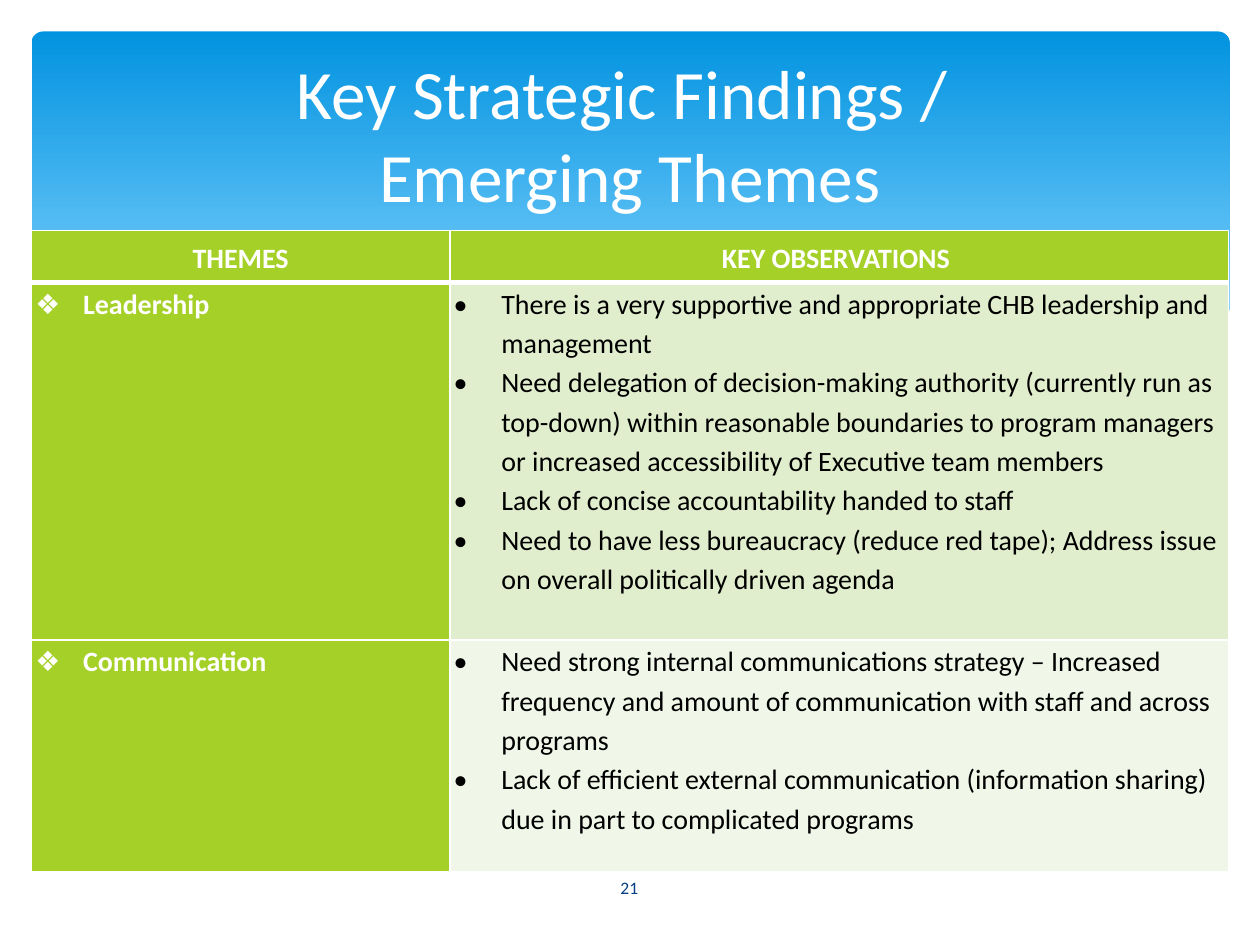
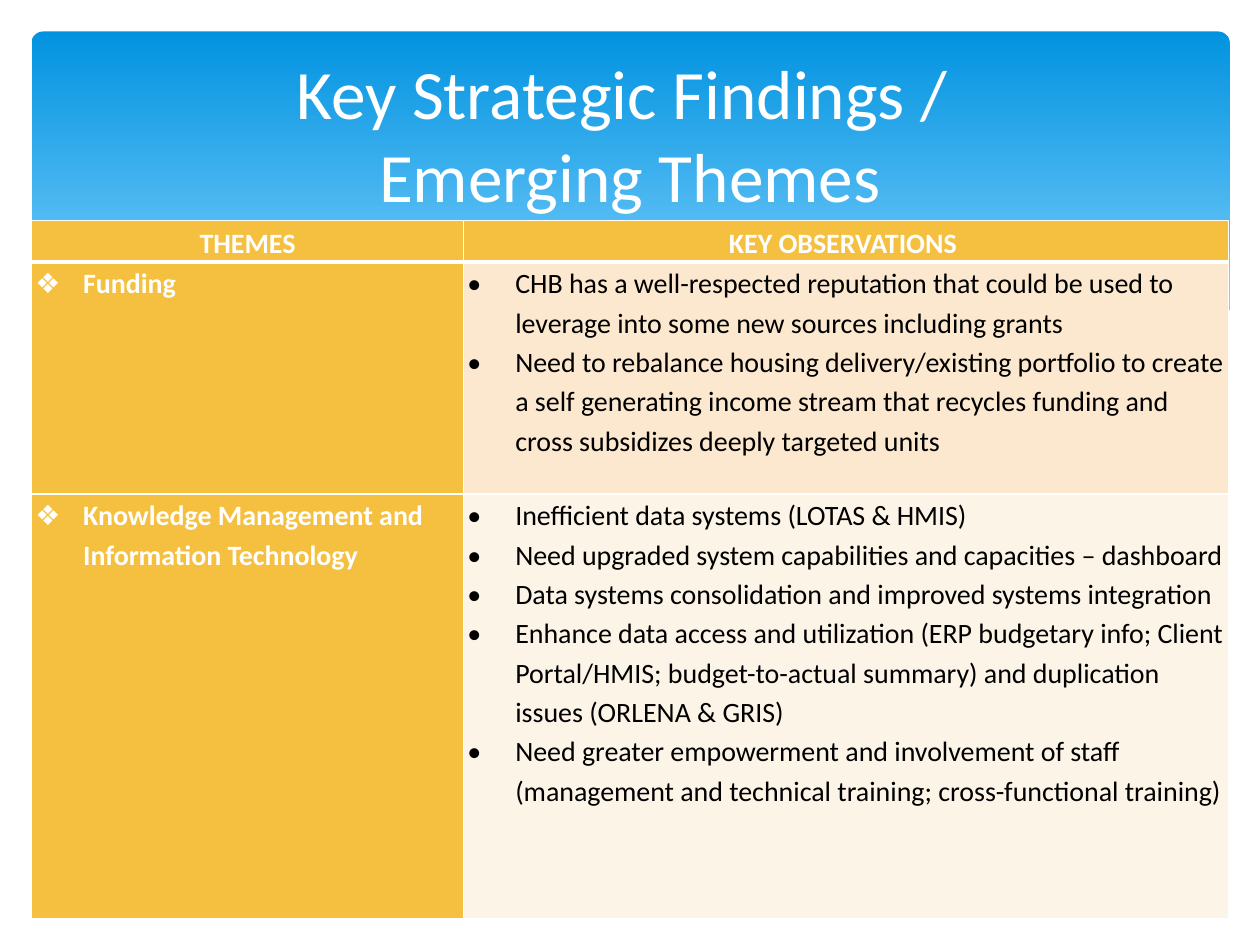
from lxml import etree
from pptx import Presentation
from pptx.dml.color import RGBColor
from pptx.enum.shapes import MSO_SHAPE
from pptx.enum.text import MSO_ANCHOR, MSO_AUTO_SIZE, PP_ALIGN
from pptx.oxml.ns import qn
from pptx.util import Inches, Pt

ROUNDED = MSO_SHAPE.ROUNDED_RECTANGLE
MIDDLE, TOP = MSO_ANCHOR.MIDDLE, MSO_ANCHOR.TOP
CENTER, LEFT = PP_ALIGN.CENTER, PP_ALIGN.LEFT
NO_FIT = MSO_AUTO_SIZE.NONE

FONT = "Calibri"
COLORS = {
    "white": "FFFFFF", "black": "000000", "navy": "073E87",
    "banner_top": "0293E0", "banner_bottom": "83D3FE", "wave": "C6E7FC",
    "green": "A5D028", "green_mid": "E1EECD", "green_pale": "F0F7E8",
    "gold": "F5C040", "gold_mid": "FBE8CF", "gold_pale": "FDF4E8",
}
TITLE = "Key Strategic Findings / \vEmerging Themes"
HEADERS = ["THEMES", "KEY OBSERVATIONS "]

SLIDES = [
    {
        "number": "21", "top": 1.83, "color": "green",
        "columns": [3.32, 6.18], "rows": [0.41, 2.84, 1.84],
        "themes": [
            ("Leadership", [
                "There is a very supportive and appropriate CHB leadership and management",
                "Need delegation of decision-making authority (currently run as top-down) within "
                "reasonable boundaries to program managers or increased accessibility of "
                "Executive team members",
                "Lack of concise accountability handed to staff",
                "Need to have less bureaucracy (reduce red tape); Address issue on overall "
                "politically driven agenda",
            ]),
            ("Communication", [
                "Need strong internal communications strategy – Increased frequency and amount "
                "of communication with staff and across programs",
                "Lack of efficient external communication (information sharing) due in part to "
                "complicated programs",
            ]),
        ],
    },
    {
        "number": None, "top": 1.75, "color": "gold",
        "columns": [3.43, 6.07], "rows": [0.33, 1.84, 3.37],
        "themes": [
            ("Funding", [
                "CHB has a well-respected reputation that could be used to leverage into some "
                "new sources including grants",
                "Need to rebalance housing delivery/existing portfolio to create a self "
                "generating income stream that recycles funding and cross subsidizes deeply "
                "targeted units",
            ]),
            ("Knowledge Management and Information Technology", [
                "Inefficient data systems (LOTAS & HMIS)",
                "Need upgraded system capabilities and capacities – dashboard",
                "Data systems consolidation and improved systems integration",
                "Enhance data access and utilization (ERP budgetary info; Client Portal/HMIS; "
                "budget-to-actual summary) and duplication issues (ORLENA & GRIS)",
                "Need greater empowerment and involvement of staff (management and technical "
                "training; cross-functional training)",
            ]),
        ],
    },
]

WAVES = [
    {"fill": "wave", "alpha": 29, "points": [
        (9.76, 2), (9.48, 2.04), (9.06, 2.13), (8.61, 2.23), (8.05, 2.37), (7.53, 2.48),
        (7.06, 2.57), (6.61, 2.65), (7.05, 2.71), (7.57, 2.76), (8.03, 2.78), (8.54, 2.76),
        (8.97, 2.7), (9.35, 2.62), (9.76, 2.47)]},
    {"fill": "wave", "alpha": 40, "points": [
        (8.93, 2.73), (8.37, 2.65), (7.75, 2.54), (7.06, 2.4), (6.29, 2.22), (5.69, 2.08),
        (5.14, 1.98), (4.64, 1.91), (4.2, 1.87), (3.8, 1.86), (3.28, 1.87), (2.86, 1.91),
        (3.42, 1.99), (4.04, 2.11), (4.91, 2.32), (5.66, 2.48), (6.34, 2.61), (6.95, 2.7),
        (7.48, 2.76), (8.07, 2.79), (8.57, 2.77)]},
    {"line": "white", "points": [
        (3.09, 1.95), (3.43, 1.9), (3.87, 1.87), (4.33, 1.87), (4.89, 1.9), (5.56, 1.97),
        (6.36, 2.08), (7.27, 2.26), (8.31, 2.51), (9.07, 2.72)]},
    {"line": "white", "points": [
        (6.13, 2.57), (6.72, 2.41), (7.48, 2.23), (8.06, 2.1), (8.66, 1.99), (9.24, 1.9),
        (9.75, 1.85)]},
    {"fill": "white", "points": [
        (9.77, 2.46), (9.4, 2.59), (8.99, 2.69), (8.5, 2.75), (8.09, 2.77), (7.61, 2.75),
        (7.08, 2.7), (6.47, 2.62), (5.79, 2.5), (5.03, 2.33), (4.18, 2.13), (3.39, 1.97),
        (2.71, 1.88), (2.11, 1.84), (1.61, 1.84), (1.06, 1.89), (0.67, 1.97), (0.36, 2.07),
        (0.23, 2.13), (0.23, 3.29), (9.77, 3.29)]},
]


def rgb(name):
    return RGBColor.from_string(COLORS[name])


def set_attributes(target, values):
    for name, value in values.items():
        setattr(target, name, value)


def place(shape, left, top, width, height):
    set_attributes(shape, {"left": Inches(left), "top": Inches(top),
                           "width": Inches(width), "height": Inches(height)})


def style_paragraph(para, size, color, bold=False, align=CENTER):
    para.alignment = align
    for span in para.runs:
        set_attributes(span.font, {"name": FONT, "size": Pt(size), "bold": bold})
        span.font.color.rgb = rgb(color)


def add_banner(page):
    banner = page.shapes.add_shape(ROUNDED, Inches(0.25), Inches(0.25), Inches(9.51), Inches(2.7))
    banner.adjustments[0] = 0.034
    banner.shadow.inherit = False
    banner.line.fill.background()
    banner.fill.gradient()
    banner.fill.gradient_angle = 270
    stops = [("banner_top", 0), ("banner_bottom", 0.9)]
    for stop, (color, position) in zip(banner.fill.gradient_stops, stops):
        stop.color.rgb = rgb(color)
        stop.position = position
    return banner


def add_wave(page, wave):
    first, *rest = [(Inches(x), Inches(y)) for x, y in wave["points"]]
    builder = page.shapes.build_freeform(*first)
    builder.add_line_segments(rest, close="fill" in wave)
    shape = builder.convert_to_shape()
    shape.shadow.inherit = False
    if "fill" in wave:
        shape.fill.solid()
        shape.fill.fore_color.rgb = rgb(wave["fill"])
        shape.line.fill.background()
    else:
        shape.fill.background()
        shape.line.color.rgb = rgb(wave["line"])
        shape.line.width = Pt(0)
    if "alpha" in wave:
        color = shape.element.find(".//" + qn("a:srgbClr"))
        etree.SubElement(color, qn("a:alpha"), val=str(wave["alpha"] * 1000))
    return shape


def move_to_layout(shapes, layout):
    tree = layout.shapes.element
    for offset, shape in enumerate(shapes):
        shape.element.find(".//" + qn("p:cNvPr")).set("id", str(100 + offset))
        tree.insert(2 + offset, shape.element)


def add_title(page):
    title = page.shapes.title
    place(title, 0.5, 0.37, 9, 1.37)
    frame = title.text_frame
    frame.text = TITLE
    set_attributes(frame, {"vertical_anchor": MIDDLE, "word_wrap": True, "auto_size": NO_FIT})
    style_paragraph(frame.paragraphs[0], 39.6, "white")


def add_page_number(page, number):
    box = page.shapes.add_textbox(Inches(4.36), Inches(6.84), Inches(1.27), Inches(0.4))
    frame = box.text_frame
    frame.text = number
    set_attributes(frame, {"vertical_anchor": MIDDLE, "word_wrap": True})
    style_paragraph(frame.paragraphs[0], 10, "navy")


def set_borders(cell, bottom):
    properties = cell._tc.get_or_add_tcPr()
    widths = {"lnL": 1, "lnR": 1, "lnT": 1, "lnB": bottom}
    for index, (side, width) in enumerate(widths.items()):
        line = etree.Element(qn("a:" + side), w=str(Pt(width)))
        fill = etree.SubElement(line, qn("a:solidFill"))
        etree.SubElement(fill, qn("a:srgbClr"), val=COLORS["white"])
        properties.insert(index, line)


def fill_cell(cell, lines, fill, color, bold, bullet=None, bottom=1):
    set_attributes(cell, {"margin_left": Inches(0.03), "margin_right": Inches(0.03),
                          "margin_top": 0, "margin_bottom": 0,
                          "vertical_anchor": TOP if bullet else MIDDLE})
    cell.fill.solid()
    cell.fill.fore_color.rgb = rgb(fill)
    set_borders(cell, bottom)
    cell.text_frame.text = "\n".join(lines)
    for para in cell.text_frame.paragraphs:
        style_paragraph(para, 16, color, bold, LEFT if bullet else CENTER)
        para.line_spacing = 1.15
        if bullet:
            properties = para._p.get_or_add_pPr()
            properties.set("marL", str(Inches(0.38)))
            properties.set("indent", str(-Inches(0.38)))
            etree.SubElement(properties, qn("a:buFont"), typeface=FONT)
            etree.SubElement(properties, qn("a:buChar"), char=bullet)


def add_themes_table(page, content):
    columns, rows, color = content["columns"], content["rows"], content["color"]
    frame = page.shapes.add_table(len(rows), len(columns), Inches(0.25), Inches(content["top"]),
                                  Inches(sum(columns)), Inches(sum(rows)))
    table = frame.table
    set_attributes(table, {"first_row": False, "horz_banding": False})
    for column, width in zip(table.columns, columns):
        column.width = Inches(width)
    for row, height in zip(table.rows, rows):
        row.height = Inches(height)
    for index, header in enumerate(HEADERS):
        fill_cell(table.cell(0, index), [header], color, "white", True, bottom=3)
    shades = [color + "_mid", color + "_pale"]
    for index, ((theme, observations), shade) in enumerate(zip(content["themes"], shades), 1):
        fill_cell(table.cell(index, 0), [theme], color, "white", True, "❖")
        fill_cell(table.cell(index, 1), observations, shade, "black", False, "•")


def main():
    deck = Presentation()
    deck.slide_width, deck.slide_height = Inches(10), Inches(7.5)
    layout = deck.slide_layouts[5]
    pages = [deck.slides.add_slide(layout) for _ in SLIDES]
    band = [add_banner(pages[0])] + [add_wave(pages[0], wave) for wave in WAVES]
    move_to_layout(band, layout)
    for page, content in zip(pages, SLIDES):
        add_title(page)
        if content["number"]:
            add_page_number(page, content["number"])
        add_themes_table(page, content)
    deck.save("out.pptx")


if __name__ == "__main__":
    main()
